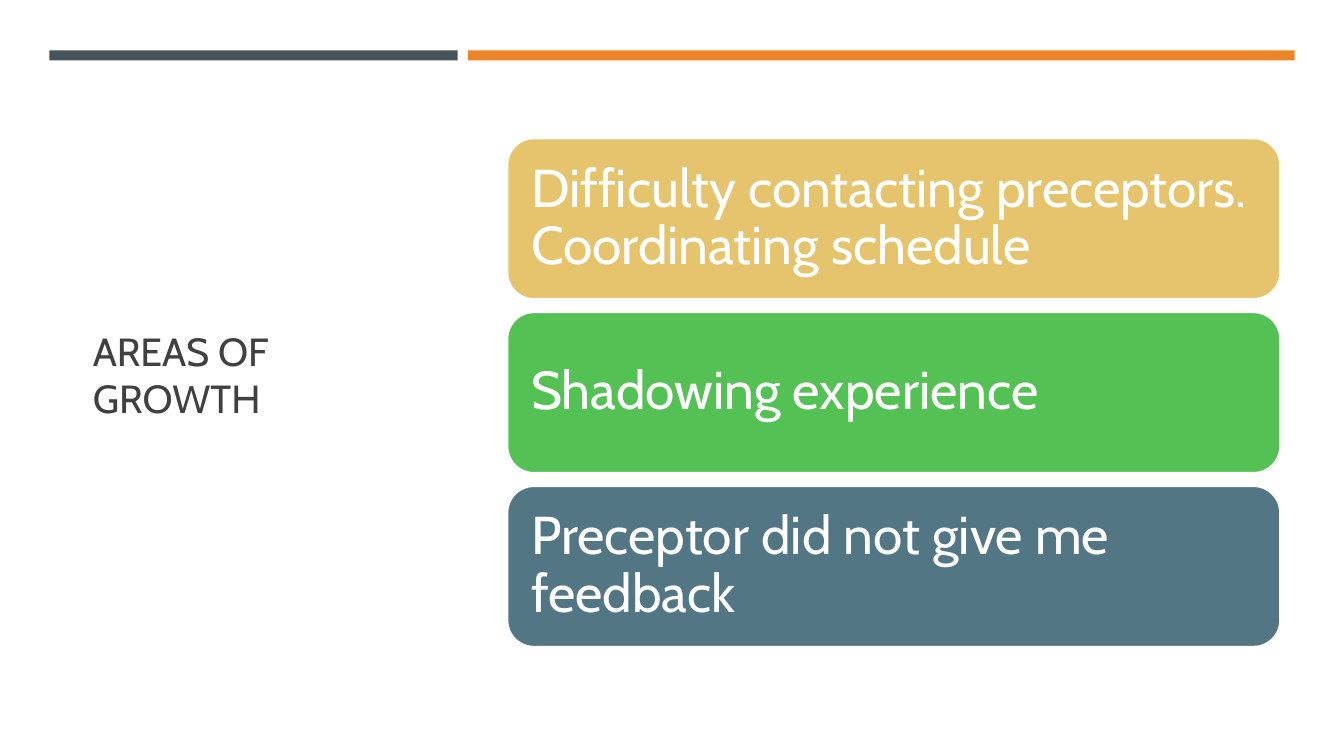
"""Build the Areas of Growth slide."""
from pptx import Presentation
from pptx.dml.color import RGBColor
from pptx.enum.shapes import MSO_SHAPE
from pptx.enum.text import MSO_ANCHOR, MSO_AUTO_SIZE, PP_ALIGN
from pptx.util import Inches, Pt

TITLE = "AREAS OF GROWTH"
FONT = "Cabin"
COLORS = {
    "white": "FFFFFF",
    "text": "404040",
    "slate": "465359",
    "orange": "ED8428",
    "gold": "E6C46D",
    "green": "54C155",
    "blue": "537685",
}
BARS = [(0.49, 4.05, "slate"), (4.64, 8.2, "orange")]
CARDS = [
    ("Difficulty contacting preceptors. Coordinating schedule", "gold"),
    ("Shadowing experience", "green"),
    ("Preceptor did not give me feedback", "blue"),
]
LEFT, TOP, WIDTH, HEIGHT, STEP = 5.03, 1.37, 7.67, 1.6, 1.725
INSET = Inches(0.16)


def color(name):
    return RGBColor.from_string(COLORS[name])


def add_box(slide, kind, box, fill):
    shape = slide.shapes.add_shape(kind, *map(Inches, box))
    shape.shadow.inherit = False
    shape.fill.solid()
    shape.fill.fore_color.rgb = color(fill)
    shape.line.fill.background()
    return shape


def set_text(shape, text, size, tint):
    frame = shape.text_frame
    frame.text = text
    frame.word_wrap = True
    frame.auto_size = MSO_AUTO_SIZE.NONE
    frame.vertical_anchor = MSO_ANCHOR.MIDDLE
    para = frame.paragraphs[0]
    para.alignment = PP_ALIGN.LEFT
    para.font.name = FONT
    para.font.size = Pt(size)
    para.font.color.rgb = color(tint)
    return frame


def add_card(slide, row, text, fill):
    box = (LEFT, TOP + row * STEP, WIDTH, HEIGHT)
    card = add_box(slide, MSO_SHAPE.ROUNDED_RECTANGLE, box, fill)
    card.line.color.rgb = color("white")
    card.line.width = Pt(1.75)
    frame = set_text(card, text, 38, "white")
    frame.margin_left = frame.margin_right = INSET
    frame.margin_top = frame.margin_bottom = INSET
    frame.paragraphs[0].line_spacing = 0.9


def main():
    deck = Presentation()
    deck.slide_width, deck.slide_height = Inches(13.33), Inches(7.5)
    slide = deck.slides.add_slide(deck.slide_layouts[5])
    slide.background.fill.solid()
    slide.background.fill.fore_color.rgb = color("white")

    title = slide.shapes.title
    title.left, title.top = Inches(0.82), Inches(1.14)
    title.width, title.height = Inches(3.34), Inches(5.15)
    set_text(title, TITLE, 28, "text")

    for left, width, fill in BARS:
        add_box(slide, MSO_SHAPE.RECTANGLE, (left, 0.5, width, 0.1), fill)
    for row, (text, fill) in enumerate(CARDS):
        add_card(slide, row, text, fill)
    deck.save("out.pptx")


if __name__ == "__main__":
    main()
